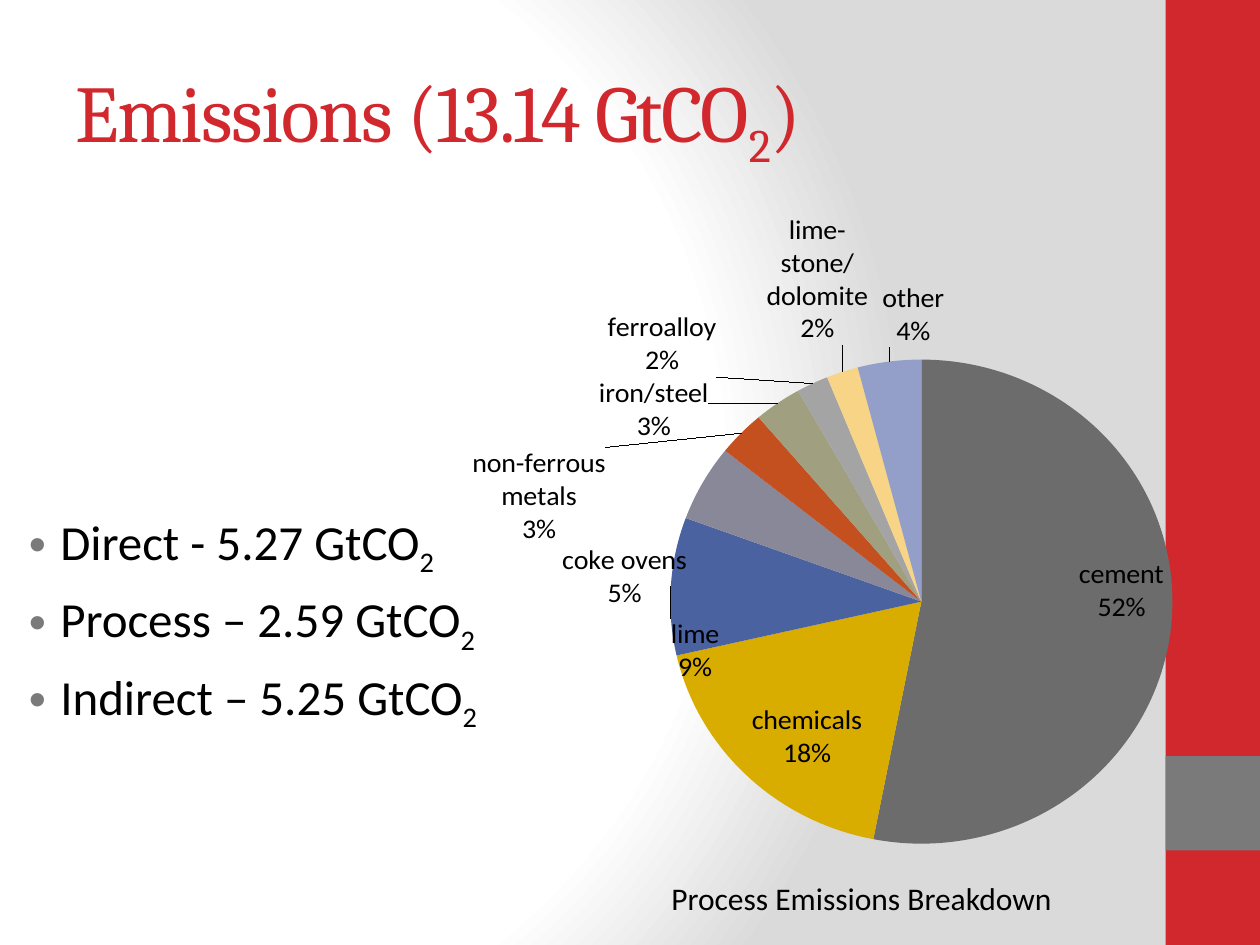
from lxml import etree
from pptx import Presentation
from pptx.chart.data import CategoryChartData
from pptx.dml.color import RGBColor
from pptx.enum.chart import XL_CHART_TYPE as CT, XL_LABEL_POSITION as LP
from pptx.enum.shapes import MSO_SHAPE as SHAPE
from pptx.enum.text import MSO_ANCHOR as ANCHOR, PP_ALIGN as ALIGN
from pptx.oxml import parse_xml
from pptx.oxml.ns import nsdecls, qn
from pptx.util import Inches, Pt

COLORS = {"red": "D1282E", "gray": "7A7A7A", "black": "000000",
          "white": "FFFFFF", "light": "DADADA"}
PERCENT = '0"%"'

# category, value, slice colour, label shift as a fraction of the chart
SLICES = [
    ("cement", 52, "6C6C6C", None),
    ("chemicals", 18, "D9AC00", None),
    ("lime", 9, "4A629F", (0.06, 0.1)),
    ("coke ovens", 5, "888898", (-0.01, 0.2)),
    ("non-ferrous metals", 3, "C44F1F", (-0.14, 0.18)),
    ("iron/steel", 3, "A09F80", (-0.07, 0.07)),
    ("ferroalloy", 2, "A4A4A4", (-0.1, 0)),
    ("lime-stone/dolomite", 2, "F8D487", (0.03, -0.03)),
    ("other", 4, "939FC8", (0.06, -0.01)),
]


def rgb(name):
    return RGBColor.from_string(COLORS.get(name, name))


def add_run(p, text, size=18, font="Calibri", color="black", sub=False, spacing=None):
    r = p.add_run()
    r.text = text
    r.font.size, r.font.name = Pt(size), font
    r.font.color.rgb = rgb(color)
    rPr = r.font._element
    if sub:
        rPr.set("baseline", "-25000")
    if spacing is not None:
        rPr.set("spc", str(spacing * 100))
    return r


def layout_xml(**values):
    parts = "".join(f'<c:{k} val="{v}"/>' for k, v in values.items())
    return f'<c:layout {nsdecls("c")}><c:manualLayout>{parts}</c:manualLayout></c:layout>'


def label_xml(idx, shift):
    layout = layout_xml(x=shift[0], y=shift[1]) if shift else ""
    position = "outEnd" if shift else "inEnd"
    return parse_xml(
        f'<c:dLbl {nsdecls("c")}><c:idx val="{idx}"/>{layout}'
        f"<c:numFmt formatCode='{PERCENT}' sourceLinked='0'/>"
        f'<c:dLblPos val="{position}"/><c:showLegendKey val="0"/><c:showVal val="1"/>'
        '<c:showCatName val="1"/><c:showSerName val="0"/><c:showPercent val="0"/>'
        '<c:showBubbleSize val="0"/><c:separator>\n</c:separator></c:dLbl>')


class SlideBuilder:
    def __init__(self, prs):
        self.s = prs.slides.add_slide(prs.slide_layouts[5])

    def background(self):
        stops = "".join(f'<a:gs pos="{pos}"><a:srgbClr val="{COLORS[c]}"/></a:gs>'
                        for pos, c in ((0, "white"), (75000, "white"), (100000, "light")))
        bg = parse_xml(
            f'<p:bg {nsdecls("p", "a")}><p:bgPr><a:gradFill rotWithShape="1">'
            f'<a:gsLst>{stops}</a:gsLst><a:path path="circle">'
            '<a:fillToRect l="20000" t="50000" r="100000" b="50000"/></a:path>'
            '</a:gradFill><a:effectLst/></p:bgPr></p:bg>')
        self.s._element.cSld.insert(0, bg)

    def bar(self, x, y, w, h, color):
        sp = self.s.shapes.add_shape(SHAPE.RECTANGLE, Inches(x), Inches(y),
                                     Inches(w), Inches(h))
        sp.shadow.inherit = False
        sp.fill.solid()
        sp.fill.fore_color.rgb = rgb(color)
        sp.line.fill.background()

    def title(self, parts, x, y, w, h):
        sp = self.s.shapes.title
        sp.left, sp.top, sp.width, sp.height = map(Inches, (x, y, w, h))
        tf = sp.text_frame
        tf.vertical_anchor = ANCHOR.MIDDLE
        p = tf.paragraphs[0]
        p.alignment = ALIGN.LEFT
        for text, sub in parts:
            add_run(p, text, size=46, font="Cambria", color="red", sub=sub, spacing=-1)

    def text_box(self, x, y, w, h, wrap=True):
        sp = self.s.shapes.add_textbox(Inches(x), Inches(y), Inches(w), Inches(h))
        sp.text_frame.word_wrap = wrap
        return sp.text_frame

    def bullets(self, items, x, y, w, h):
        tf = self.text_box(x, y, w, h)
        for i, item in enumerate(items):
            p = tf.add_paragraph() if i else tf.paragraphs[0]
            p.space_before = Pt(6)
            pPr = p._p.get_or_add_pPr()
            pPr.set("marL", str(Inches(0.38)))
            pPr.set("indent", str(Inches(-0.25)))
            color = etree.SubElement(pPr, qn("a:buClr"))
            etree.SubElement(color, qn("a:srgbClr"), val=COLORS["gray"])
            etree.SubElement(pPr, qn("a:buFont"), typeface="Arial")
            etree.SubElement(pPr, qn("a:buChar"), char="•")
            add_run(p, item, size=28)
            add_run(p, "2", size=28, sub=True)

    def caption(self, text, x, y, w, h):
        tf = self.text_box(x, y, w, h, wrap=False)
        add_run(tf.paragraphs[0], text)

    def pie(self, slices, x, y, w, h):
        data = CategoryChartData(number_format=PERCENT)
        data.categories = [row[0] for row in slices]
        data.add_series("Series 1", [row[1] for row in slices])
        chart = self.s.shapes.add_chart(CT.PIE, Inches(x), Inches(y), Inches(w),
                                        Inches(h), data).chart
        chart.has_title = chart.has_legend = False
        chart.font.size, chart.font.name = Pt(16), "Calibri"
        chart.font.color.rgb = rgb("black")
        plot = chart.plots[0]
        plot.vary_by_categories = True
        series = plot.series[0]

        # Labels: category above its percentage
        labels = series.data_labels
        labels.show_value = labels.show_category_name = True
        labels.number_format, labels.number_format_is_linked = PERCENT, False
        labels.position = LP.OUTSIDE_END
        dLbls = labels._element
        for i, (_, _, color, shift) in enumerate(slices):
            fill = series.points[i].format.fill
            fill.solid()
            fill.fore_color.rgb = rgb(color)
            dLbls.insert(i, label_xml(i, shift))
        separator = etree.Element(qn("c:separator"))
        separator.text = "\n"
        dLbls.find(qn("c:showBubbleSize")).addnext(separator)

        # Fixed place for the pie inside the chart
        area = chart._chartSpace.chart.plotArea
        for old in area.findall(qn("c:layout")):
            area.remove(old)
        area.insert(0, parse_xml(layout_xml(
            layoutTarget="inner", xMode="edge", yMode="edge",
            x=0.29, y=0.17, w=0.54, h=0.75)))


def main():
    prs = Presentation()
    prs.slide_width, prs.slide_height = Inches(10), Inches(7.5)
    b = SlideBuilder(prs)

    # Background and side bars
    b.background()
    b.bar(9.25, 0, 0.75, 7.5, "red")
    b.bar(9.25, 6, 0.75, 0.75, "gray")

    # Title and totals
    b.title([("Emissions (13.14 GtCO", False), ("2", True), (")", False)],
            0.5, 0.3, 8.33, 1.25)
    b.bullets(["Direct - 5.27 GtCO", "Process – 2.59 GtCO", "Indirect – 5.25 GtCO"],
              0, 4.01, 4.11, 2.31)

    # Breakdown chart and its caption
    b.pie(SLICES, 3.18, 1.75, 7.38, 5.39)
    b.caption("Process Emissions Breakdown", 5.23, 6.93, 3.27, 0.4)

    prs.save("out.pptx")


if __name__ == "__main__":
    main()
